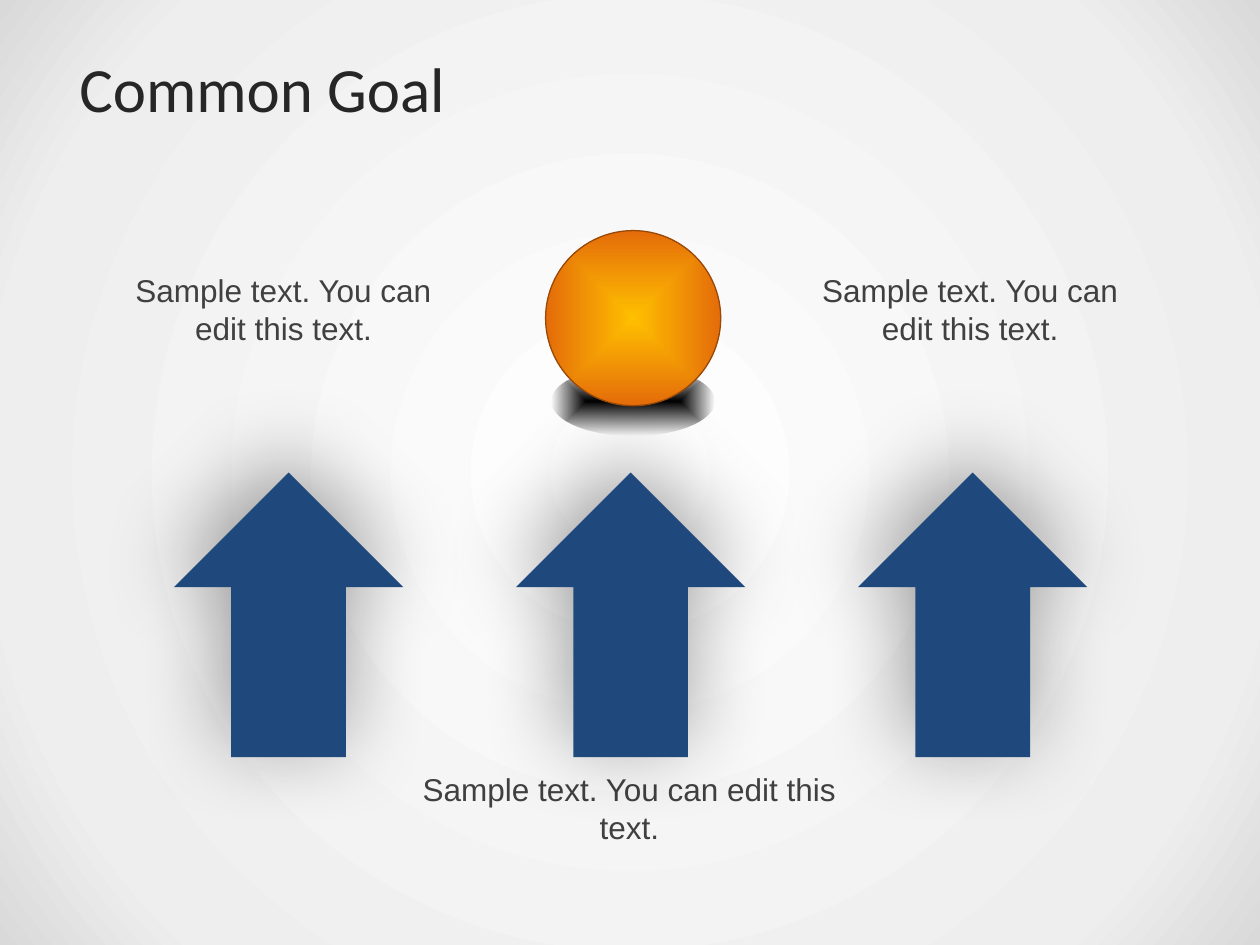
from lxml import etree
from pptx import Presentation
from pptx.dml.color import RGBColor
from pptx.enum.shapes import MSO_SHAPE as Shape
from pptx.enum.text import MSO_ANCHOR as Anchor, PP_ALIGN as Align
from pptx.oxml.ns import qn
from pptx.util import Inches, Pt

BLACK = RGBColor(0x00, 0x00, 0x00)
WHITE = RGBColor(0xFF, 0xFF, 0xFF)
PALE = RGBColor(0xEE, 0xEE, 0xEE)
SILVER = RGBColor(0xD9, 0xD9, 0xD9)
TITLE_INK = RGBColor(0x26, 0x26, 0x26)
BODY_INK = RGBColor(0x40, 0x40, 0x40)
NAVY = RGBColor(0x1F, 0x49, 0x7D)
GOLD = RGBColor(0xFF, 0xC0, 0x00)
ORANGE = RGBColor(0xE4, 0x6C, 0x0A)
BROWN = RGBColor(0x98, 0x48, 0x07)

CAPTION = "Sample text. You can edit this text."


def add_node(parent, tag, **attributes):
    values = {key: str(value) for key, value in attributes.items()}
    return etree.SubElement(parent, qn(tag), values)


def add_color(parent, color, opacity):
    node = add_node(parent, "a:srgbClr", val=color)
    if opacity < 100:
        add_node(node, "a:alpha", val=opacity * 1000)


def set_radial_fill(fill, properties, path_kind, stops):
    fill.solid()
    solid = properties.find(qn("a:solidFill"))
    gradient = etree.Element(qn("a:gradFill"), rotWithShape="1")
    stop_list = add_node(gradient, "a:gsLst")
    for position, color, opacity in stops:
        stop = add_node(stop_list, "a:gs", pos=position * 1000)
        add_color(stop, color, opacity)
    path = add_node(gradient, "a:path", path=path_kind)
    add_node(path, "a:fillToRect", l=50000, t=50000, r=50000, b=50000)
    properties.replace(solid, gradient)


def set_soft_shadow(shape):
    shape.shadow.inherit = False
    effects = shape._element.spPr.find(qn("a:effectLst"))
    shadow = add_node(effects, "a:outerShdw", blurRad=Pt(51), dist=Pt(10),
                      dir=253 * 60000, algn="ctr", rotWithShape=0)
    add_color(shadow, BLACK, 40)


def add_text(slide, box, text, size, font, color, align):
    frame = slide.shapes.add_textbox(*map(Inches, box)).text_frame
    frame.word_wrap = True
    paragraph = frame.paragraphs[0]
    paragraph.alignment = align
    run = paragraph.add_run()
    run.text = text
    run.font.size = Pt(size)
    run.font.name = font
    run.font.color.rgb = color
    return frame


def add_background(slide):
    fill = slide.background.fill
    fill.solid()
    properties = slide._element.find(".//" + qn("p:bgPr"))
    set_radial_fill(fill, properties, "circle",
                    [(0, WHITE, 100), (81, PALE, 100), (100, SILVER, 100)])


def add_title(slide, box):
    frame = add_text(slide, box, "Common Goal", 36, "Calibri", TITLE_INK, Align.LEFT)
    frame.vertical_anchor = Anchor.MIDDLE
    frame.margin_left = frame.margin_right = Inches(0.13)
    frame.margin_top = frame.margin_bottom = Inches(0.07)


def add_caption(slide, box):
    add_text(slide, box, CAPTION, 18, "Arial", BODY_INK, Align.CENTER)


def add_arrows(slide, box, count=3, arrow_width=1.82):
    left, top, width, height = box
    step = (width - arrow_width) / (count - 1)
    group = slide.shapes.add_group_shape()
    for index in range(count):
        arrow = group.shapes.add_shape(
            Shape.DOWN_ARROW, Inches(left + index * step), Inches(top),
            Inches(arrow_width), Inches(height))
        arrow.rotation = 180
        arrow.fill.solid()
        arrow.fill.fore_color.rgb = NAVY
        arrow.line.fill.background()
        set_soft_shadow(arrow)


def add_disc(group, box, stops):
    disc = group.shapes.add_shape(Shape.OVAL, *map(Inches, box))
    disc.shadow.inherit = False
    set_radial_fill(disc.fill, disc._element.spPr, "shape", stops)
    disc.line.fill.background()
    return disc


def add_goal_ball(slide, box):
    left, top, diameter, height = box
    group = slide.shapes.add_group_shape()
    add_disc(group, (left + 0.05, top + height - 0.55, diameter - 0.1, 0.55),
             [(0, BLACK, 100), (100, BLACK, 0)])
    ball = add_disc(group, (left, top, diameter, diameter),
                    [(0, GOLD, 100), (100, ORANGE, 100)])
    ball.line.color.rgb = BROWN
    ball.line.width = Pt(0.75)


def main():
    deck = Presentation()
    deck.slide_width, deck.slide_height = Inches(10), Inches(7.5)
    slide = deck.slides.add_slide(deck.slide_layouts[6])
    add_background(slide)
    add_title(slide, (0.5, 0.3, 9, 0.78))
    add_caption(slide, (3.08, 6.06, 3.83, 0.71))
    add_arrows(slide, (1.38, 3.75, 7.25, 2.26))
    for left in (0.83, 6.28):
        add_caption(slide, (left, 2.1, 2.84, 0.71))
    add_goal_ball(slide, (4.33, 1.83, 1.39, 1.63))
    deck.save("out.pptx")


if __name__ == "__main__":
    main()
